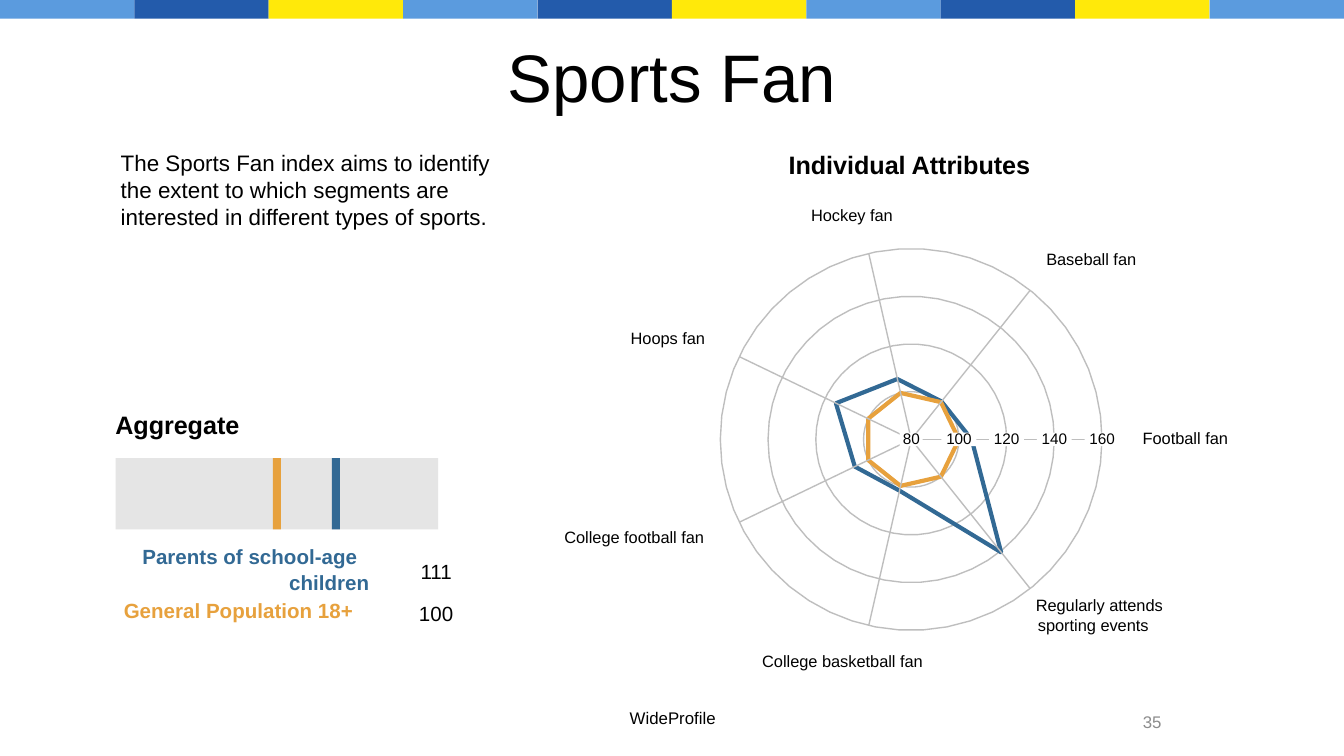
from math import cos, pi, sin

from pptx import Presentation
from pptx.dml.color import RGBColor
from pptx.enum.shapes import MSO_CONNECTOR, MSO_SHAPE
from pptx.enum.text import MSO_ANCHOR, PP_ALIGN
from pptx.oxml.ns import qn
from pptx.util import Inches, Pt

RECT = MSO_SHAPE.RECTANGLE
STRAIGHT = MSO_CONNECTOR.STRAIGHT
TOP, MIDDLE = MSO_ANCHOR.TOP, MSO_ANCHOR.MIDDLE
LEFT, CENTER, RIGHT = PP_ALIGN.LEFT, PP_ALIGN.CENTER, PP_ALIGN.RIGHT

# Content
BLUE, ORANGE, GRID, BLACK = "326994", "E7A13D", "BEBEBE", "000000"
STRIPES = ["5B9BDE", "235BAB", "FFE90A"]
TITLE = "Sports Fan"

HEADING = {"size": Pt(13.5), "bold": True}
BODY = {"size": Pt(12)}
SMALL = {"size": Pt(9)}
TEXTS = [  # text, box, font, colour, alignment, anchor
    ("Aggregate", (0.76, 3, 1.55, 0.34), HEADING, BLACK, LEFT, TOP),
    ("The Sports Fan index aims to identify the extent to which segments "
     "are interested in different types of sports.",
     (0.8, 1.06, 3.19, 1.56), BODY, BLACK, LEFT, TOP),
    ("WideProfile", (4.23, 5.22, 1.55, 0.25), SMALL, BLACK, CENTER, TOP),
    ("Individual Attributes", (5.77, 1.06, 2.6, 0.56), HEADING, BLACK, LEFT, TOP),
    ("35", (7.46, 5.22, 1.28, 0.3), SMALL, "8C8C8C", RIGHT, MIDDLE),
]

AGGREGATE_BARS = [  # left, width, colour
    (0.86, 2.4, "E5E5E5"), (2.03, 0.06, ORANGE), (2.47, 0.06, BLUE),
]
LEGEND = [  # text, box, colour, bold
    ("Parents of school-age", (0.92, 4.08, 1.88, 0.15), BLUE, True),
    ("children", (2.1, 4.29, 0.7, 0.12), BLUE, True),
    ("General Population 18+", (0.75, 4.48, 2.05, 0.15), ORANGE, True),
    ("111", (3.1, 4.21, 0.29, 0.11), BLACK, False),
    ("100", (3.1, 4.52, 0.29, 0.12), BLACK, False),
]

# Radar: values run counterclockwise from the right-hand spoke
CX, CY, RADIUS = 6.78, 3.27, 1.42
TICKS = [80, 100, 120, 140, 160]
RING_SIDES = 50
SERIES = [
    ([105.4, 100.4, 106, 115, 106.2, 102, 140.5], BLUE),
    ([100] * 7, ORANGE),
]
ATTRIBUTES = [
    ("Football fan", (8.48, 3.22, 0.68, 0.1)),
    ("Baseball fan", (7.75, 1.89, 0.74, 0.1)),
    ("Hockey fan", (6.01, 1.56, 0.66, 0.1)),
    ("Hoops fan", (4.66, 2.48, 0.62, 0.1)),
    ("College football fan", (4.14, 3.96, 1.16, 0.1)),
    ("College basketball fan", (5.58, 4.88, 1.38, 0.1)),
    ("Regularly attends", (7.64, 4.45, 1.08, 0.12)),
    ("sporting events", (7.66, 4.6, 0.95, 0.12)),
]

prs = Presentation()
prs.slide_width, prs.slide_height = Inches(10), Inches(10 * 9 / 16)
s = prs.slides.add_slide(prs.slide_layouts[5])
shapes = s.shapes


def rgb(value):
    return RGBColor.from_string(value)


def inches(values):
    return [Inches(v) for v in values]


def add_rect(box, color):
    sp = shapes.add_shape(RECT, *inches(box))
    sp.shadow.inherit = False
    sp.fill.solid()
    sp.fill.fore_color.rgb = rgb(color)
    sp.line.fill.background()


def write(tf, text, font, color, align, anchor):
    tf.vertical_anchor = anchor
    p = tf.paragraphs[0]
    p.alignment = align
    r = p.add_run()
    r.text = text
    for key, value in {"name": "Arial", **font}.items():
        setattr(r.font, key, value)
    r.font.color.rgb = rgb(color)


def add_text(text, box, font, color, align, anchor):
    tf = shapes.add_textbox(*inches(box)).text_frame
    tf.word_wrap = True
    write(tf, text, font, color, align, anchor)


def add_label(text, box, size, color=BLACK, bold=False):
    """One tight line of text centred in its box, without margins or wrapping."""
    tf = shapes.add_textbox(*inches(box)).text_frame
    tf.word_wrap = False
    for side in ("left", "top", "right", "bottom"):
        setattr(tf, f"margin_{side}", 0)
    write(tf, text, {"size": Pt(size), "bold": bold}, color, CENTER, MIDDLE)
    tf.paragraphs[0].line_spacing = Pt(size)


def radar_points(values):
    """Slide positions of values spread evenly around the radar."""
    points = []
    for i, value in enumerate(values):
        angle = 2 * pi * i / len(values)
        dist = RADIUS * (value - TICKS[0]) / (TICKS[-1] - TICKS[0])
        points.append(inches((CX + dist * cos(angle), CY - dist * sin(angle))))
    return points


def add_polygon(values, color, width):
    first, *rest = radar_points(values)
    builder = shapes.build_freeform(*first)
    builder.add_line_segments(rest, close=True)
    sp = builder.convert_to_shape()
    sp.shadow.inherit = False
    sp.fill.background()
    sp.line.color.rgb = rgb(color)
    sp.line.width = Pt(width)


# Top stripes
for i in range(10):
    add_rect((i, 0, 1, 0.14), STRIPES[i % len(STRIPES)])

# Title
title = shapes.title
title.left, title.top, title.width, title.height = inches((0.5, 0.23, 9, 0.67))
write(title.text_frame, TITLE, {"size": Pt(36)}, BLACK, CENTER, MIDDLE)

# Headings, description and footer
for item in TEXTS:
    add_text(*item)

# Aggregate bar and legend
for left, width, color in AGGREGATE_BARS:
    add_rect((left, 3.41, width, 0.53), color)
for text, box, color, bold in LEGEND:
    add_label(text, box, 11, color, bold)

# Radar rings, series and spokes
for tick in reversed(TICKS[1:]):
    add_polygon([tick] * RING_SIDES, GRID, 0.75)
for values, color in SERIES:
    add_polygon(values, color, 2.25)
for end in radar_points([TICKS[-1]] * 7):
    spoke = shapes.add_connector(STRAIGHT, Inches(CX), Inches(CY), *end)
    spoke.line.color.rgb = rgb(GRID)
    spoke.line.width = Pt(0.75)
    sp_pr = spoke._element.spPr
    sp_pr.append(sp_pr.makeelement(qn("a:effectLst"), {}))

# Radar attribute and scale labels
for text, box in ATTRIBUTES:
    add_label(text, box, 8.8)
for i, tick in enumerate(TICKS):
    x = CX + RADIUS * i / (len(TICKS) - 1)
    mask, width = (0.17, 0.15) if tick < 100 else (0.26, 0.22)
    add_rect((x - mask / 2, 3.22, mask, 0.1), "FFFFFF")
    add_label(str(tick), (x - width / 2, 3.23, width, 0.08), 8.2)

prs.save("out.pptx")
